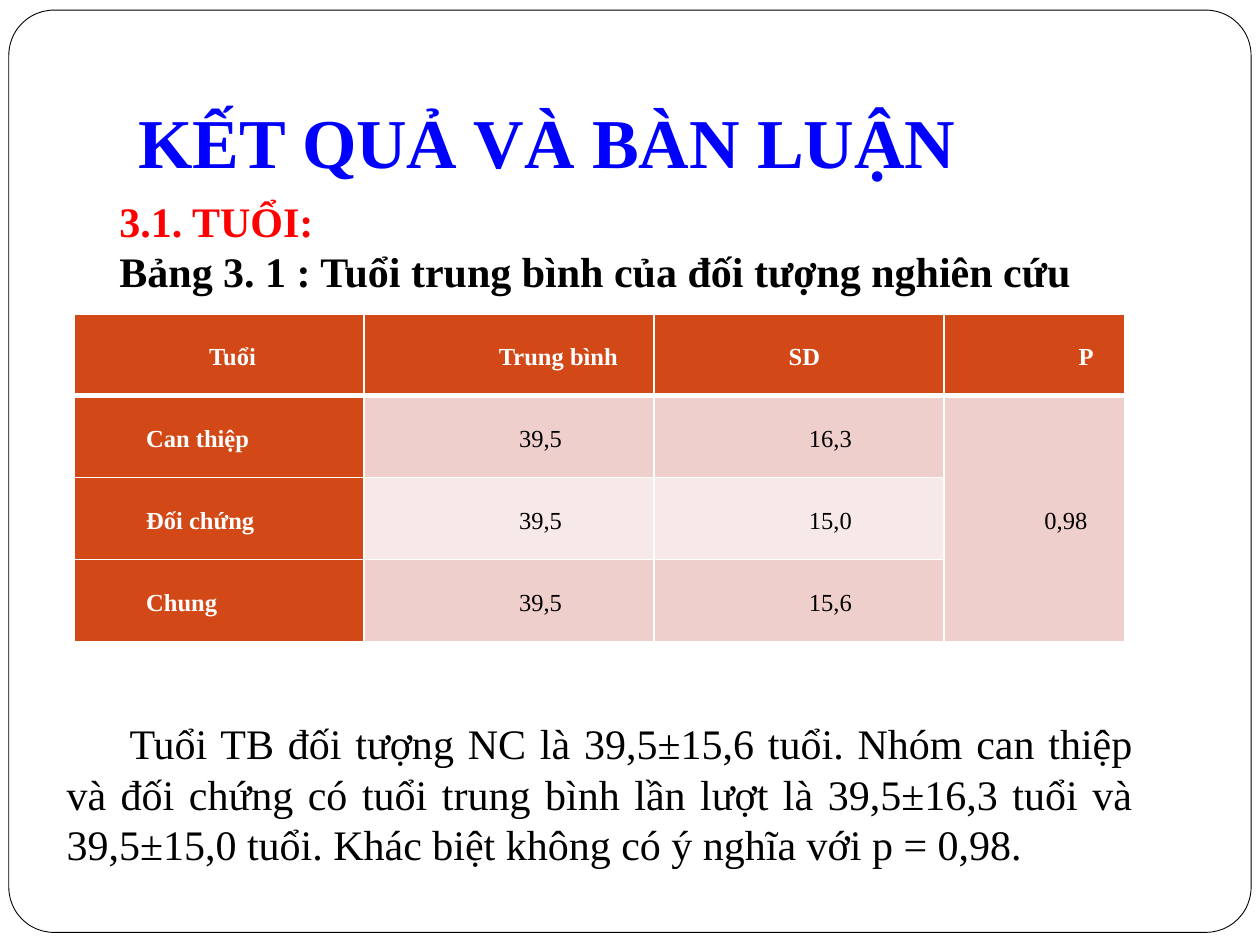
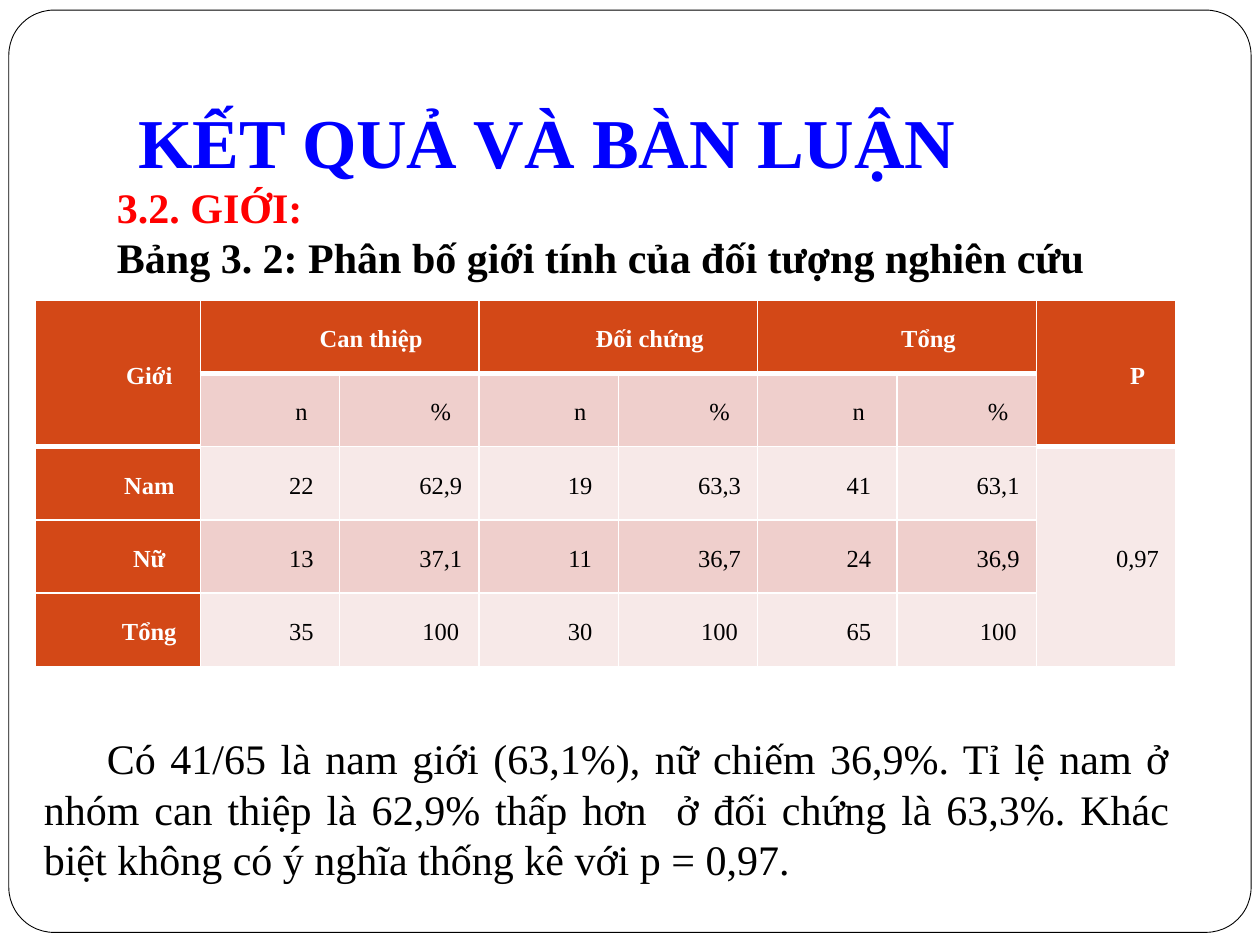
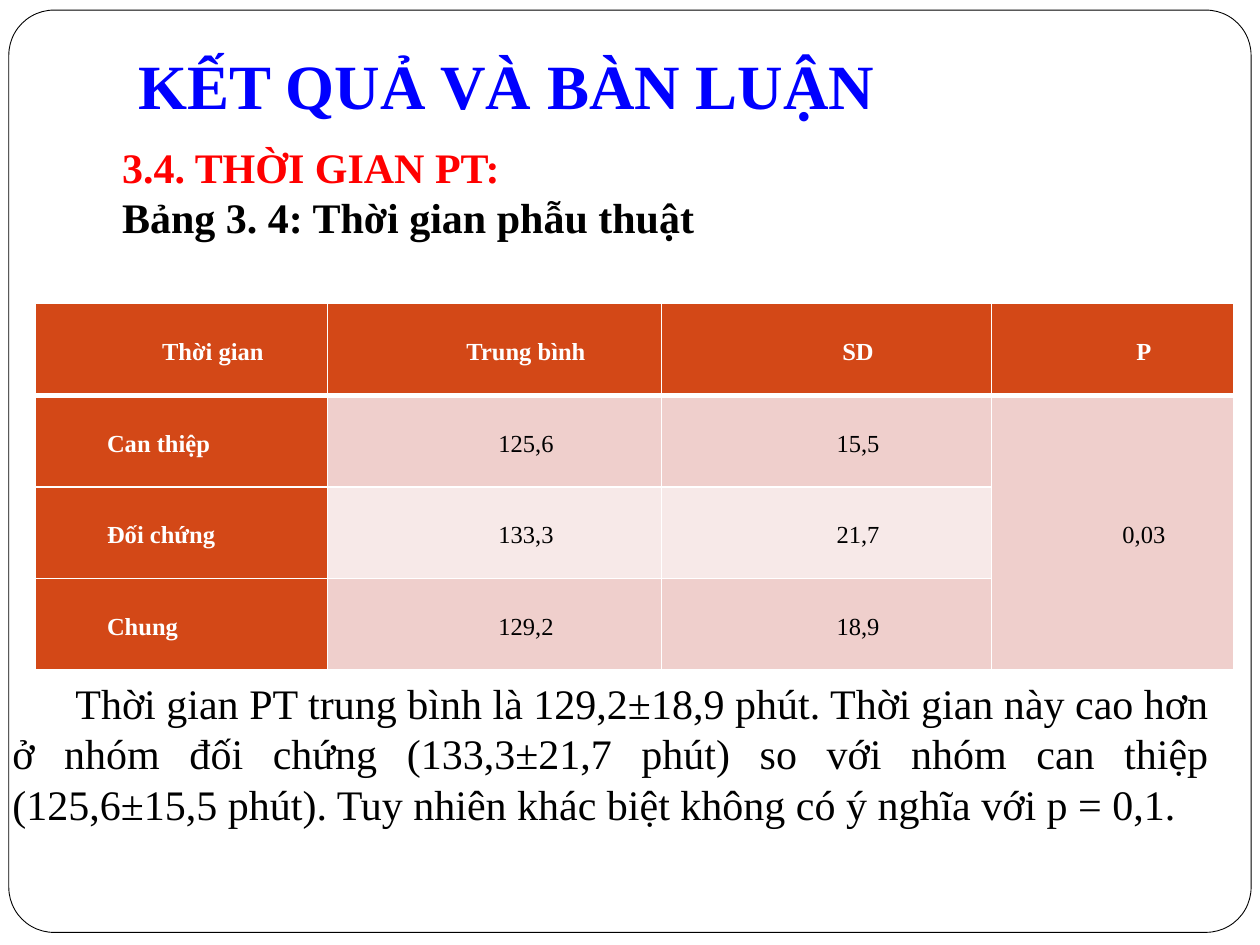
"""Build three result slides, each with a heading, a caption, a table and a comment."""
from lxml import etree
from pptx import Presentation
from pptx.dml.color import RGBColor
from pptx.enum import shapes, text
from pptx.oxml.ns import qn
from pptx.util import Inches, Pt

FONT = "Times New Roman"
WHITE = RGBColor(0xFF, 0xFF, 0xFF)
BLACK = RGBColor(0, 0, 0)
BLUE = RGBColor(0, 0, 0xFF)
RED = RGBColor(0xFF, 0, 0)
ORANGE = RGBColor(0xD3, 0x48, 0x17)
PINK = RGBColor(0xEF, 0xCF, 0xCC)
PALE = RGBColor(0xF7, 0xE9, 0xE8)
LEFT, CENTER, JUSTIFY = text.PP_ALIGN.LEFT, text.PP_ALIGN.CENTER, text.PP_ALIGN.JUSTIFY
TOP, MIDDLE, BOTTOM = text.MSO_ANCHOR.TOP, text.MSO_ANCHOR.MIDDLE, text.MSO_ANCHOR.BOTTOM

SLIDES = [
    dict(
        title=(1.25, 40),
        caption=(0.35, 1.5, 8.33, 0.91),
        lines=("3.1. TUỔI:", "Bảng 3. 1 : Tuổi trung bình của đối tượng nghiên cứu"),
        table=(0.59, 2.49, 8.35, 2.6),
        cols=(2.3, 2.3, 2.3, 1.44),
        rows=[("Tuổi", "Trung bình", "SD", "P"),
              ("Can thiệp", "39,5", "16,3", "0,98"),
              ("Đối chứng", "39,5", "15,0", ""),
              ("Chung", "39,5", "15,6", "")],
        merges=[(1, 3, 3, 3)],
        depths=(1, 1, 1, 1),
        head=(JUSTIFY, 0.5), side=JUSTIFY, before=(5, 2),
        comment=(0.43, 5.64, 8.66, 1.31),
        note="Tuổi TB đối tượng NC là 39,5±15,6 tuổi. Nhóm can thiệp và đối chứng có tuổi "
             "trung bình lần lượt là 39,5±16,3 tuổi và 39,5±15,0 tuổi. Khác biệt không có ý "
             "nghĩa với p = 0,98."),
    dict(
        title=(1.25, 40),
        caption=(0.33, 1.39, 9.21, 0.91),
        lines=("3.2. GIỚI:", "Bảng 3. 2: Phân bố giới tính của đối tượng nghiên cứu"),
        table=(0.28, 2.38, 9.05, 2.91),
        cols=(1.31,) + (1.106,) * 7,
        rows=[("Giới", "Can thiệp", "", "Đối chứng", "", "Tổng", "", "P"),
              ("", "n", "%", "n", "%", "n", "%", ""),
              ("Nam", "22", "62,9", "19", "63,3", "41", "63,1", "0,97"),
              ("Nữ", "13", "37,1", "11", "36,7", "24", "36,9", ""),
              ("Tổng", "35", "100", "30", "100", "65", "100", "")],
        merges=[(0, 0, 1, 0), (0, 1, 0, 2), (0, 3, 0, 4), (0, 5, 0, 6), (0, 7, 1, 7), (2, 7, 4, 7)],
        depths=(2, 1, 1, 1, 1, 1, 1, 2),
        head=(CENTER, 0), side=CENTER, before=(5, 2),
        comment=(0.25, 5.76, 9.13, 1.31),
        note="Có 41/65 là nam giới (63,1%), nữ chiếm 36,9%. Tỉ lệ nam ở nhóm can thiệp là "
             "62,9% thấp hơn  ở đối chứng là 63,3%. Khác biệt không có ý nghĩa thống kê với "
             "p = 0,97."),
    dict(
        title=(0.77, 36),
        caption=(0.37, 1.07, 7.72, 0.91),
        lines=("3.4. THỜI GIAN PT:", "Bảng 3. 4: Thời gian phẫu thuật"),
        table=(0.28, 2.41, 9.52, 2.91),
        cols=(2.32, 2.65, 2.62, 1.92),
        rows=[("Thời gian", "Trung bình", "SD", "P"),
              ("Can thiệp", "125,6", "15,5", "0,03"),
              ("Đối chứng", "133,3", "21,7", ""),
              ("Chung", "129,2", "18,9", "")],
        merges=[(1, 3, 3, 3)],
        depths=(1, 1, 1, 1),
        head=(CENTER, 0), side=JUSTIFY, before=(3, 3),
        comment=(0, 5.32, 9.69, 1.31),
        note="Thời gian PT trung bình là 129,2±18,9 phút. Thời gian này cao hơn ở nhóm đối "
             "chứng (133,3±21,7 phút) so với nhóm can thiệp (125,6±15,5 phút). Tuy nhiên khác "
             "biệt không có ý nghĩa với p = 0,1."),
]


def write(p, words, size, color, bold, align, margin=0, indent=0):
    """Fill a paragraph with one formatted run."""
    p.alignment = align
    pPr = p._p.get_or_add_pPr()
    pPr.set("marL", str(Inches(margin)))
    pPr.set("indent", str(Inches(indent)))
    r = p.add_run()
    r.text = words
    r.font.name, r.font.size, r.font.bold = FONT, Pt(size), bold
    r.font.color.rgb = color


def add_box(s, place, anchor):
    """Add a wrapping text box and return its text frame."""
    tf = s.shapes.add_textbox(*map(Inches, place)).text_frame
    tf.word_wrap = True
    tf.vertical_anchor = anchor
    return tf


prs = Presentation()
prs.slide_width, prs.slide_height = Inches(10), Inches(7.5)

for d in SLIDES:
    s = prs.slides.add_slide(prs.slide_layouts[6])
    frame = s.shapes.add_shape(shapes.MSO_SHAPE.ROUNDED_RECTANGLE,
                               *map(Inches, (0.07, 0.08, 9.86, 7.32)))
    frame.adjustments[0] = 0.049
    frame.shadow.inherit = False
    frame.fill.solid()
    frame.fill.fore_color.rgb = WHITE
    frame.line.color.rgb = BLACK
    frame.line.width = Pt(0.5)

    height, size = d["title"]
    tf = add_box(s, (1, 0.3, 8.5, height), BOTTOM)
    tf.margin_bottom = Inches(0.1)
    write(tf.paragraphs[0], "KẾT QUẢ VÀ BÀN LUẬN", size, BLUE, True, LEFT)

    tf = add_box(s, d["caption"], TOP)
    write(tf.paragraphs[0], d["lines"][0], 24, RED, True, JUSTIFY, indent=0.5)
    write(tf.add_paragraph(), d["lines"][1], 24, BLACK, True, JUSTIFY, indent=0.5)

    rows, depths = d["rows"], d["depths"]
    tb = s.shapes.add_table(len(rows), len(depths), *map(Inches, d["table"])).table
    tb.horz_banding = False
    for col, width in zip(tb.columns, d["cols"]):
        col.width = Inches(width)
    for r1, c1, r2, c2 in d["merges"]:
        tb.cell(r1, c1).merge(tb.cell(r2, c2))

    for i, row in enumerate(rows):
        for j, words in enumerate(row):
            cell = tb.cell(i, j)
            is_head = i < depths[j]
            is_label = is_head or j == 0
            cell.vertical_anchor = MIDDLE
            cell.margin_left = cell.margin_right = Inches(0.07)
            cell.margin_top = cell.margin_bottom = 0

            thick = {"lnT": i == depths[j], "lnB": is_head}
            for side in ("lnL", "lnR", "lnT", "lnB"):
                width = Pt(3 if thick.get(side) else 1)
                ln = etree.SubElement(cell._tc.get_or_add_tcPr(), qn("a:" + side), w=str(width))
                fill = etree.SubElement(ln, qn("a:solidFill"))
                etree.SubElement(fill, qn("a:srgbClr"), val=str(WHITE))
            cell.fill.solid()
            cell.fill.fore_color.rgb = ORANGE if is_label else PINK if i % 2 else PALE

            if words:
                p = cell.text_frame.paragraphs[0]
                p.line_spacing = 1.2
                p.space_before = Pt(d["before"][0 if is_head else 1])
                align, indent = d["head"] if is_head else (d["side"] if j == 0 else CENTER, 0)
                write(p, words, 14, WHITE if is_label else BLACK, is_label, align, 0.5, indent)

    tf = add_box(s, d["comment"], MIDDLE)
    write(tf.paragraphs[0], d["note"], 24, BLACK, False, JUSTIFY, indent=0.5)

prs.save("out.pptx")
